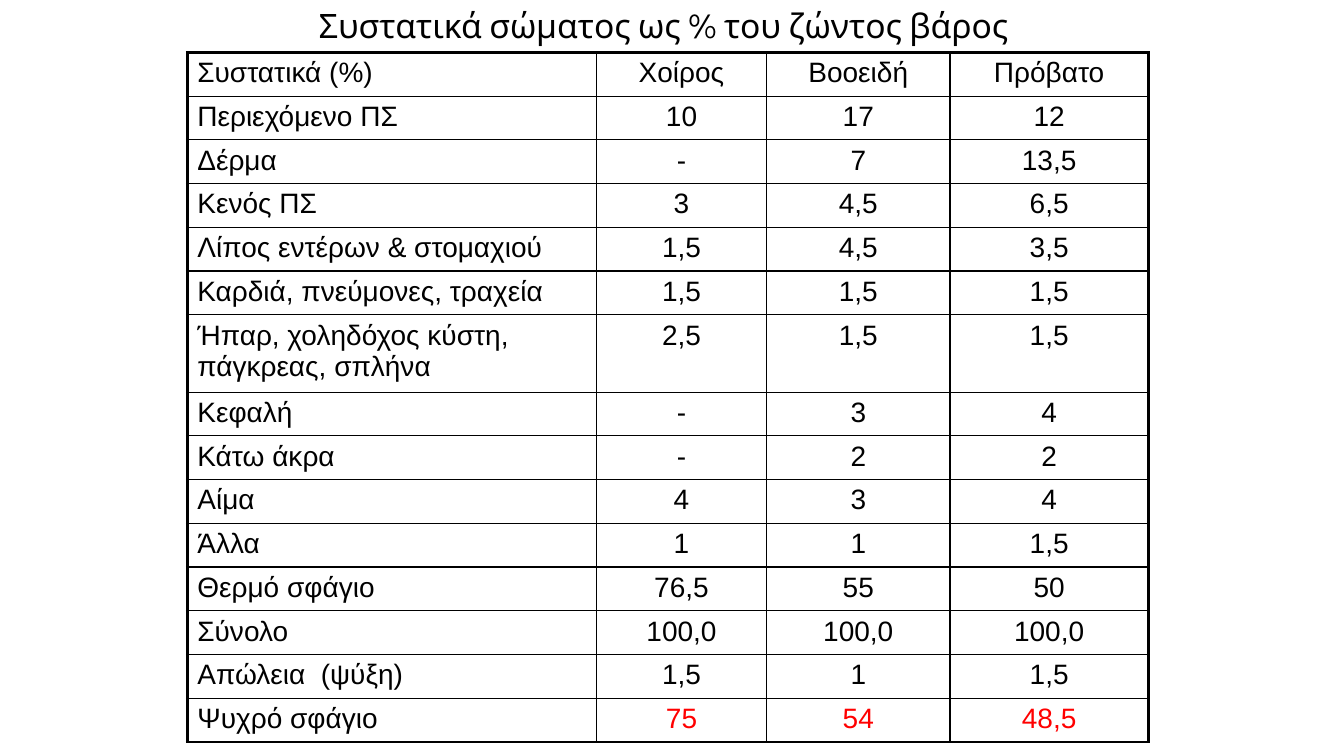
from dataclasses import dataclass

from lxml import etree
from pptx import Presentation
from pptx.dml.color import RGBColor
from pptx.enum.text import MSO_ANCHOR, MSO_AUTO_SIZE, PP_ALIGN
from pptx.oxml.ns import qn
from pptx.slide import Slide
from pptx.table import Table, _Cell
from pptx.text.text import TextFrame
from pptx.util import Cm, Pt

LEFT = PP_ALIGN.LEFT
CENTER = PP_ALIGN.CENTER
TOP = MSO_ANCHOR.TOP
GROW_TO_TEXT = MSO_AUTO_SIZE.SHAPE_TO_FIT_TEXT
TITLE_ONLY_LAYOUT = 5


@dataclass(frozen=True)
class Theme:
    ink: str = "000000"
    accent: str = "FF0000"
    paper: str = "FFFFFF"
    title_font: str = "Cabin"
    table_font: str = "Arial"
    title_size: float = 24
    table_size: float = 20
    inner_line: float = 1
    outer_line: float = 2.25


@dataclass(frozen=True)
class Component:
    name: str
    pig: str
    cattle: str
    sheep: str
    height: float = 1.09
    highlighted: bool = False

    def texts(self) -> tuple[str, str, str, str]:
        return self.name, self.pig, self.cattle, self.sheep


THEME = Theme()
TITLE = "Συστατικά σώματος ως % του ζώντος βάρος"
COLUMN_WIDTHS = (10.31, 4.29, 4.62, 5)
COMPONENTS = (
    Component("Συστατικά (%)", "Χοίρος", "Βοοειδή", "Πρόβατο"),
    Component("Περιεχόμενο ΠΣ", "10", "17", "12"),
    Component("Δέρμα", "-", "7", "13,5"),
    Component("Κενός ΠΣ", "3", "4,5", "6,5"),
    Component("Λίπος εντέρων & στομαχιού", "1,5", "4,5", "3,5"),
    Component("Καρδιά, πνεύμονες, τραχεία", "1,5", "1,5", "1,5"),
    Component("Ήπαρ, χοληδόχος κύστη, πάγκρεας, σπλήνα", "2,5", "1,5", "1,5", height=1.89),
    Component("Κεφαλή", "-", "3", "4"),
    Component("Κάτω άκρα", "-", "2", "2"),
    Component("Αίμα", "4", "3", "4"),
    Component("Άλλα", "1", "1", "1,5"),
    Component("Θερμό σφάγιο", "76,5", "55", "50"),
    Component("Σύνολο", "100,0", "100,0", "100,0"),
    Component("Απώλεια  (ψύξη)", "1,5", "1", "1,5"),
    Component("Ψυχρό σφάγιο", "75", "54", "48,5", highlighted=True),
)


def write_text(frame: TextFrame, text: str, *, font: str, size: float,
               color: str = THEME.ink, align: PP_ALIGN = LEFT) -> None:
    frame.word_wrap = True
    paragraph = frame.paragraphs[0]
    paragraph.alignment = align
    run = paragraph.add_run()
    run.text = text
    run.font.name = font
    run.font.size = Pt(size)
    run.font.color.rgb = RGBColor.from_string(color)


def set_border(cell: _Cell, tag: str, width: float) -> None:
    line = etree.SubElement(cell._tc.get_or_add_tcPr(), qn(tag), w=str(Pt(width)))
    fill = etree.SubElement(line, qn("a:solidFill"))
    etree.SubElement(fill, qn("a:srgbClr"), val=THEME.ink)


def format_cell(table: Table, row: int, column: int) -> None:
    """Give the cell a plain fill and a heavier line where it meets the table edge."""
    cell = table.cell(row, column)
    edges = {
        "a:lnL": column == 0,
        "a:lnR": column == len(COLUMN_WIDTHS) - 1,
        "a:lnT": row == 0,
        "a:lnB": row == len(COMPONENTS) - 1,
    }
    for tag, is_outer in edges.items():
        set_border(cell, tag, THEME.outer_line if is_outer else THEME.inner_line)
    cell.fill.solid()
    cell.fill.fore_color.rgb = RGBColor.from_string(THEME.paper)
    cell.vertical_anchor = TOP


def add_title(slide: Slide) -> None:
    title = slide.shapes.title
    title.left, title.top, title.width, title.height = Cm(4.52), Cm(0), Cm(24.41), Cm(1.27)
    title.text_frame.vertical_anchor = TOP
    title.text_frame.auto_size = GROW_TO_TEXT
    write_text(title.text_frame, TITLE, font=THEME.title_font,
               size=THEME.title_size, align=CENTER)


def add_component_table(slide: Slide) -> None:
    heights = [component.height for component in COMPONENTS]
    table = slide.shapes.add_table(
        len(COMPONENTS), len(COLUMN_WIDTHS), Cm(4.72), Cm(1.32),
        Cm(sum(COLUMN_WIDTHS)), Cm(sum(heights))).table
    table.first_row = False
    table.horz_banding = False
    for column, width in enumerate(COLUMN_WIDTHS):
        table.columns[column].width = Cm(width)
    for row, component in enumerate(COMPONENTS):
        table.rows[row].height = Cm(component.height)
        for column, text in enumerate(component.texts()):
            is_value = column > 0
            format_cell(table, row, column)
            write_text(table.cell(row, column).text_frame, text,
                       font=THEME.table_font, size=THEME.table_size,
                       color=THEME.accent if is_value and component.highlighted else THEME.ink,
                       align=CENTER if is_value else LEFT)


def main() -> None:
    presentation = Presentation()
    presentation.slide_width = Cm(33.87)
    presentation.slide_height = Cm(19.05)
    slide = presentation.slides.add_slide(presentation.slide_layouts[TITLE_ONLY_LAYOUT])
    add_component_table(slide)
    add_title(slide)
    presentation.save("out.pptx")


if __name__ == "__main__":
    main()
